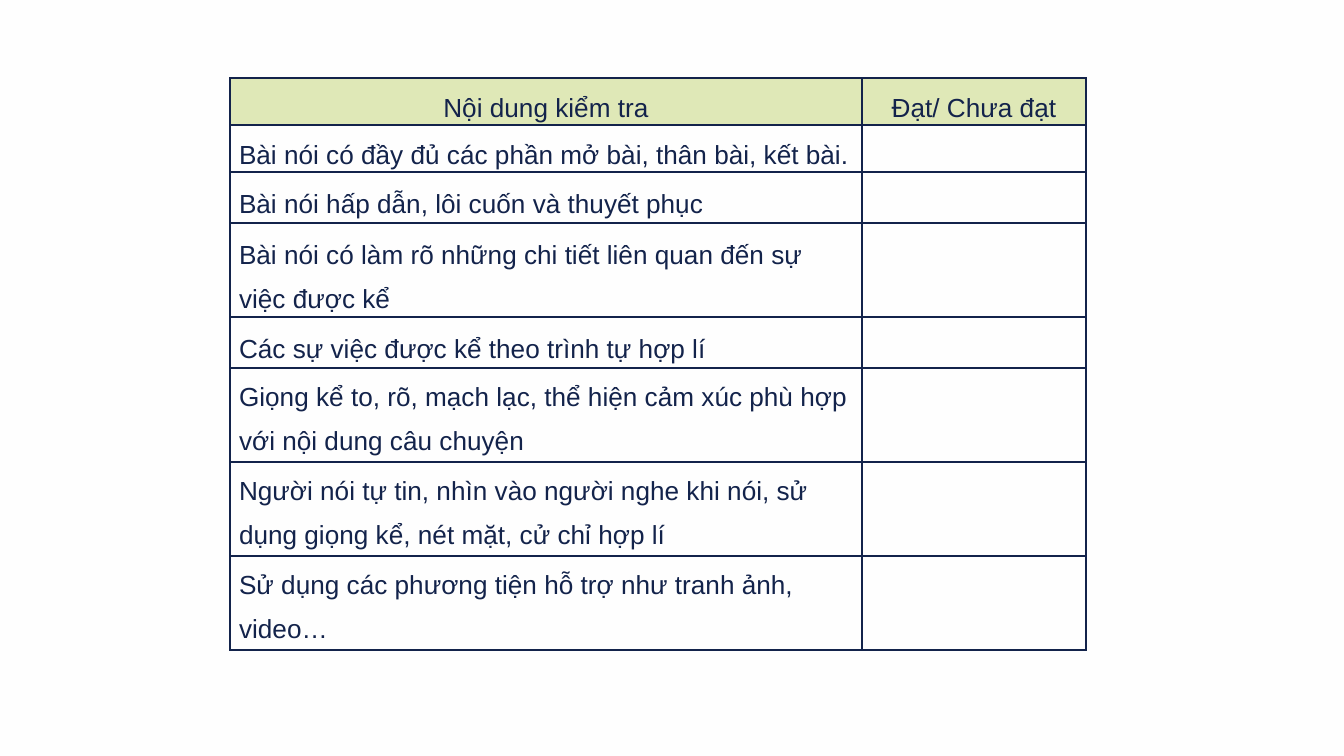
from lxml import etree
from pptx import Presentation
from pptx import util as u
from pptx.dml.color import RGBColor
from pptx.enum import text
from pptx.oxml import ns

PX = 914400 / 134.4
NAVY, GREEN, PAPER = "13234B", "DFE8B7", "FEFEFE"


def px(length):
    return u.Emu(round(length * PX))


def paint(fill, color):
    fill.solid()
    fill.fore_color.rgb = RGBColor.from_string(color)


# Page
deck = Presentation()
deck.slide_width, deck.slide_height = px(1344), px(756)
page = deck.slides.add_slide(deck.slide_layouts[6])
paint(page.background.fill, PAPER)

# Checklist: row height in px, text in the first column
header = ["Nội dung kiểm tra", "Đạt/ Chưa đạt"]
criteria = [
    (47, "Bài nói có đầy đủ các phần mở bài, thân bài, kết bài."),
    (51, "Bài nói hấp dẫn, lôi cuốn và thuyết phục"),
    (94, "Bài nói có làm rõ những chi tiết liên quan đến sự việc được kể"),
    (51, "Các sự việc được kể theo trình tự hợp lí"),
    (94, "Giọng kể to, rõ, mạch lạc, thể hiện cảm xúc phù hợp với nội dung câu chuyện"),
    (94, "Người nói tự tin, nhìn vào người nghe khi nói, sử dụng giọng kể, nét mặt, cử chỉ hợp lí"),
    (94, "Sử dụng các phương tiện hỗ trợ như tranh ảnh, video…"),
]
rows = [(47, header)] + [(height, [criterion, ""]) for height, criterion in criteria]
widths = [632, 224]

# Table frame
frame = page.shapes.add_table(len(rows), len(widths), px(230), px(78),
                              px(sum(widths)), px(sum(height for height, _ in rows)))
table = frame.table
table.first_row = table.horz_banding = False
for column, width in zip(table.columns, widths):
    column.width = px(width)

# Cells
for row_index, (height, labels) in enumerate(rows):
    table.rows[row_index].height = px(height)
    for column_index, label in enumerate(labels):
        cell = table.cell(row_index, column_index)
        cell.margin_left = cell.margin_right = px(9)
        cell.margin_top = cell.margin_bottom = 0
        cell.vertical_anchor = text.MSO_ANCHOR.MIDDLE if row_index < 5 else text.MSO_ANCHOR.TOP

        # Borders
        properties = cell._tc.get_or_add_tcPr()
        for side in ("a:lnL", "a:lnR", "a:lnT", "a:lnB"):
            line = etree.SubElement(properties, ns.qn(side), w=str(u.Pt(1)))
            solid = etree.SubElement(line, ns.qn("a:solidFill"))
            etree.SubElement(solid, ns.qn("a:srgbClr"), val=NAVY)

        if row_index == 0:
            paint(cell.fill, GREEN)
        else:
            cell.fill.background()

        # Text
        cell.text = label
        para = cell.text_frame.paragraphs[0]
        para.alignment = text.PP_ALIGN.CENTER if row_index == 0 else text.PP_ALIGN.LEFT
        if label:
            para.line_spacing = 1.5
        para.font.name = "Arial"
        para.font.size = u.Pt(14)
        paint(para.font.fill, NAVY)

deck.save("out.pptx")
